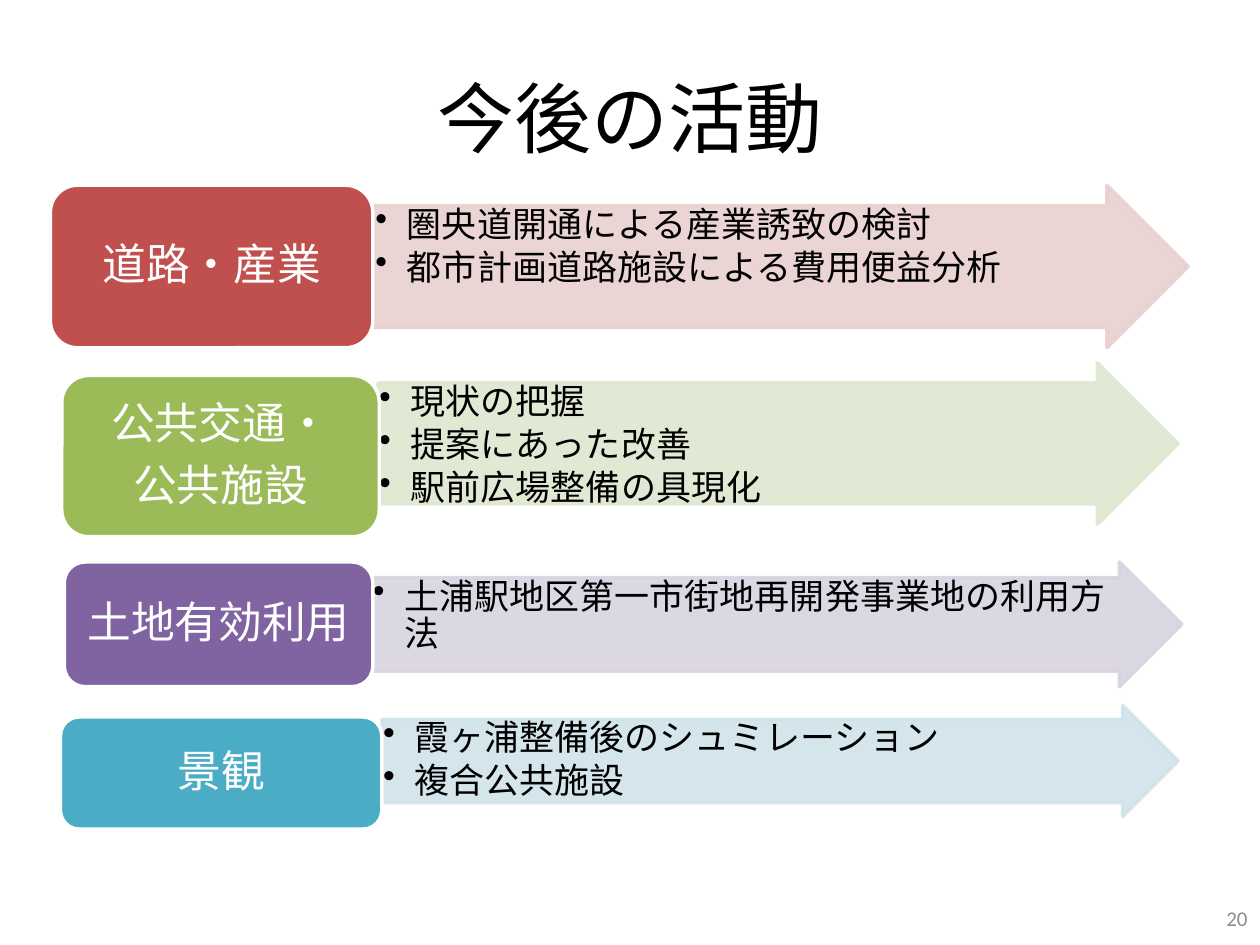
from pptx import Presentation
from pptx.dml.color import RGBColor
from pptx.enum.shapes import MSO_SHAPE
from pptx.enum.text import MSO_ANCHOR, PP_ALIGN
from pptx.oxml.ns import qn
from pptx.util import Inches, Pt
from lxml import etree

ARROW, ROUNDED = MSO_SHAPE.RIGHT_ARROW, MSO_SHAPE.ROUNDED_RECTANGLE
TOP, MIDDLE = MSO_ANCHOR.TOP, MSO_ANCHOR.MIDDLE
LEFT, CENTER, RIGHT = PP_ALIGN.LEFT, PP_ALIGN.CENTER, PP_ALIGN.RIGHT
FONT = "Calibri"
TITLE_ONLY = 5

COLORS = {
    "black": "000000", "white": "FFFFFF", "gray": "8C8C8C",
    "red": "C0504D", "red_tint": "E8D0D0",
    "green": "9BBB59", "green_tint": "DEE7D1",
    "purple": "8064A2", "purple_tint": "D8D3E0",
    "aqua": "4BACC6", "aqua_tint": "D0E3EA",
}

# color, label lines, label box, activities, arrow box
ACTIVITY_ROWS = [
    ("red", ["道路・産業"], (0.4, 1.47, 2.56, 1.29),
     ["圏央道開通による産業誘致の検討", "都市計画道路施設による費用便益分析"],
     (2.97, 1.47, 6.46, 1.29)),
    ("green", ["公共交通・", "公共施設"], (0.49, 2.98, 2.52, 1.28),
     ["現状の把握", "提案にあった改善", "駅前広場整備の具現化"],
     (3, 2.88, 6.35, 1.28)),
    ("purple", ["土地有効利用"], (0.51, 4.46, 2.45, 0.99),
     ["土浦駅地区第一市街地再開発事業地の利用方法"],
     (2.95, 4.46, 6.43, 0.99)),
    ("aqua", ["景観"], (0.48, 5.69, 2.55, 0.89),
     ["霞ヶ浦整備後のシュミレーション", "複合公共施設"],
     (3.03, 5.6, 6.32, 0.88)),
]


def rgb(name):
    return RGBColor.from_string(COLORS[name])


def write(shape, lines, size, color, align, anchor):
    frame = shape.text_frame
    frame.word_wrap = True
    frame.vertical_anchor = anchor
    frame.text = "\n".join(lines)
    for para in frame.paragraphs:
        para.alignment = align
        for span in para.runs:
            span.font.name = FONT
            span.font.size = Pt(size)
            span.font.color.rgb = rgb(color)


def space(shape, after):
    for para in shape.text_frame.paragraphs:
        para.line_spacing = 0.9
        para.space_after = Pt(after)


def add_bullet(para):
    properties = para._p.get_or_add_pPr()
    properties.set("marL", str(Inches(0.25)))
    properties.set("indent", str(Inches(-0.25)))
    etree.SubElement(properties, qn("a:buChar")).set("char", "•")


def make_translucent(shape, percent):
    """Give the fill and the line of a shape the same opacity."""
    for color in shape._element.spPr.iter(qn("a:srgbClr")):
        etree.SubElement(color, qn("a:alpha")).set("val", str(percent * 1000))


def add_block(page, kind, box, fill, line):
    shape = page.shapes.add_shape(kind, *map(Inches, box))
    shape.shadow.inherit = False
    shape.fill.solid()
    shape.fill.fore_color.rgb = rgb(fill)
    shape.line.color.rgb = rgb(line)
    shape.line.width = Pt(2)
    return shape


def add_arrow(page, box, color, activities):
    arrow = add_block(page, ARROW, box, color, color)
    arrow.adjustments[0], arrow.adjustments[1] = 0.75, 0.5
    make_translucent(arrow, 90)
    write(arrow, activities, 20, "black", LEFT, TOP)
    space(arrow, 3)
    frame = arrow.text_frame
    frame.margin_left = frame.margin_right = Inches(0.01)
    frame.margin_top = frame.margin_bottom = Inches(0.01)
    for para in frame.paragraphs:
        add_bullet(para)


def add_label(page, box, color, lines):
    label = add_block(page, ROUNDED, box, color, "white")
    write(label, lines, 25, "white", CENTER, MIDDLE)
    space(label, 8.75)


def add_title(page, box, text):
    title = page.shapes.title
    title.left, title.top, title.width, title.height = map(Inches, box)
    write(title, [text], 44, "black", CENTER, MIDDLE)


def add_page_number(page, box, number):
    number_box = page.shapes.add_textbox(*map(Inches, box))
    write(number_box, [number], 12, "gray", RIGHT, MIDDLE)


def main():
    deck = Presentation()
    deck.slide_width, deck.slide_height = Inches(10), Inches(7.5)
    page = deck.slides.add_slide(deck.slide_layouts[TITLE_ONLY])
    add_title(page, (0.5, 0.3, 9, 1.25), "今後の活動")
    for color, label, label_box, activities, arrow_box in ACTIVITY_ROWS:
        add_arrow(page, arrow_box, color + "_tint", activities)
        add_label(page, label_box, color, label)
    add_page_number(page, (7.67, 7.09, 2.33, 0.4), "20")
    deck.save("out.pptx")


if __name__ == "__main__":
    main()
